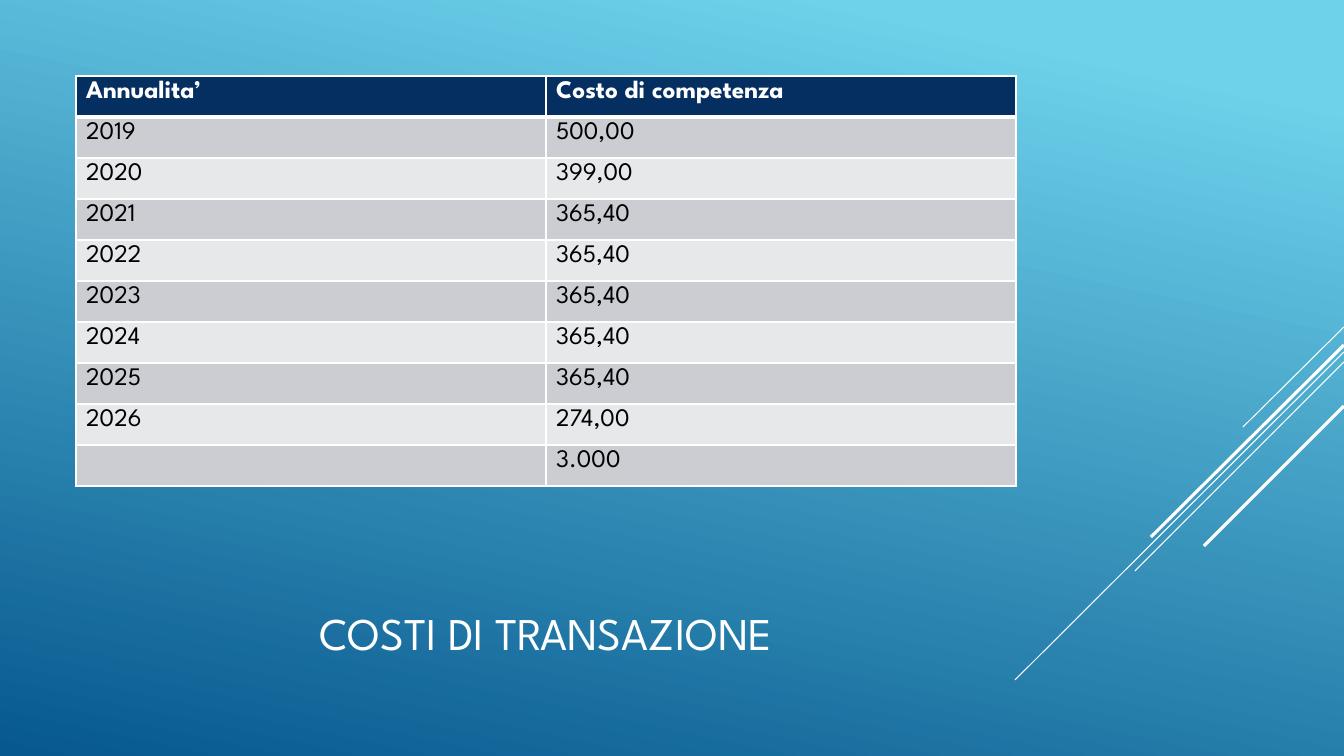
from lxml import etree
from pptx import Presentation
from pptx.dml.color import RGBColor
from pptx.enum.shapes import MSO_CONNECTOR
from pptx.enum.text import MSO_ANCHOR, PP_ALIGN
from pptx.oxml import parse_xml
from pptx.oxml.ns import nsdecls, qn
from pptx.util import Emu, Pt

FONT = "League Spartan"
WHITE = RGBColor(0xFF, 0xFF, 0xFF)
BLACK = RGBColor(0x00, 0x00, 0x00)
SKY = RGBColor(0x6E, 0xD2, 0xEB)
OCEAN = RGBColor(0x06, 0x58, 0x8E)
NAVY = RGBColor(0x05, 0x2F, 0x61)
GREY = RGBColor(0xCC, 0xCD, 0xD2)
PALE_GREY = RGBColor(0xE7, 0xE8, 0xEA)


def px(length):
    return Emu(round(length * 914400 / 100.8))


def set_border(cell, sides):
    properties = cell._tc.get_or_add_tcPr()
    for position, (side, points) in enumerate(sides.items()):
        properties.insert(position, parse_xml(
            f'<a:{side} {nsdecls("a")} w="{Pt(points)}"><a:solidFill>'
            f'<a:srgbClr val="{WHITE}"/></a:solidFill></a:{side}>'))


deck = Presentation()
deck.slide_width, deck.slide_height = px(1344), px(756)
slide = deck.slides.add_slide(deck.slide_layouts[6])

backdrop = slide.background.fill
backdrop.gradient()
backdrop.gradient_angle = 258
for stop, position, color in zip(backdrop.gradient_stops, (0.1, 1), (SKY, OCEAN)):
    stop.position = position
    stop.color.rgb = color

streaks = [
    (327, 1243, 427, 0.75),
    (352, 1015, 680, 0.75),
    (362, 1135, 571, 0.75),
    (345, 1151, 537, 2.25),
    (406, 1204, 546, 2.25),
]
for start_y, end_x, end_y, weight in streaks:
    streak = slide.shapes.add_connector(
        MSO_CONNECTOR.STRAIGHT, px(1344), px(start_y), px(end_x), px(end_y))
    streak.line.color.rgb = WHITE
    streak.line.width = Pt(weight)
    etree.SubElement(streak._element.spPr, qn("a:effectLst"))

title = slide.shapes.add_textbox(px(76), px(604), px(940), px(56)).text_frame
title.word_wrap = True
title.vertical_anchor = MSO_ANCHOR.MIDDLE
heading = title.paragraphs[0]
heading.text = "COSTI DI TRANSAZIONE"
heading.alignment = PP_ALIGN.CENTER
heading.font.name = FONT
heading.font.size = Pt(32.4)
heading.font.color.rgb = WHITE

yearly_costs = [
    ("Annualita’", "Costo di competenza"),
    ("2019", "500,00"),
    ("2020", "399,00"),
    ("2021", "365,40"),
    ("2022", "365,40"),
    ("2023", "365,40"),
    ("2024", "365,40"),
    ("2025", "365,40"),
    ("2026", "274,00"),
    ("", "3.000"),
]
costs = slide.shapes.add_table(
    len(yearly_costs), 2, px(76), px(76), px(940), px(410)).table
for row, values in enumerate(yearly_costs):
    is_header = row == 0
    costs.rows[row].height = px(41)
    for column, value in enumerate(values):
        cell = costs.cell(row, column)
        cell.fill.solid()
        cell.fill.fore_color.rgb = NAVY if is_header else GREY if row % 2 else PALE_GREY
        set_border(cell, {"lnL": 1, "lnR": 1, "lnT": 3 if row == 1 else 1,
                          "lnB": 3 if is_header else 1})
        entry = cell.text_frame.paragraphs[0]
        entry.text = value
        entry.font.name = FONT
        entry.font.size = Pt(18)
        entry.font.bold = is_header
        entry.font.color.rgb = WHITE if is_header else BLACK

deck.save("out.pptx")
